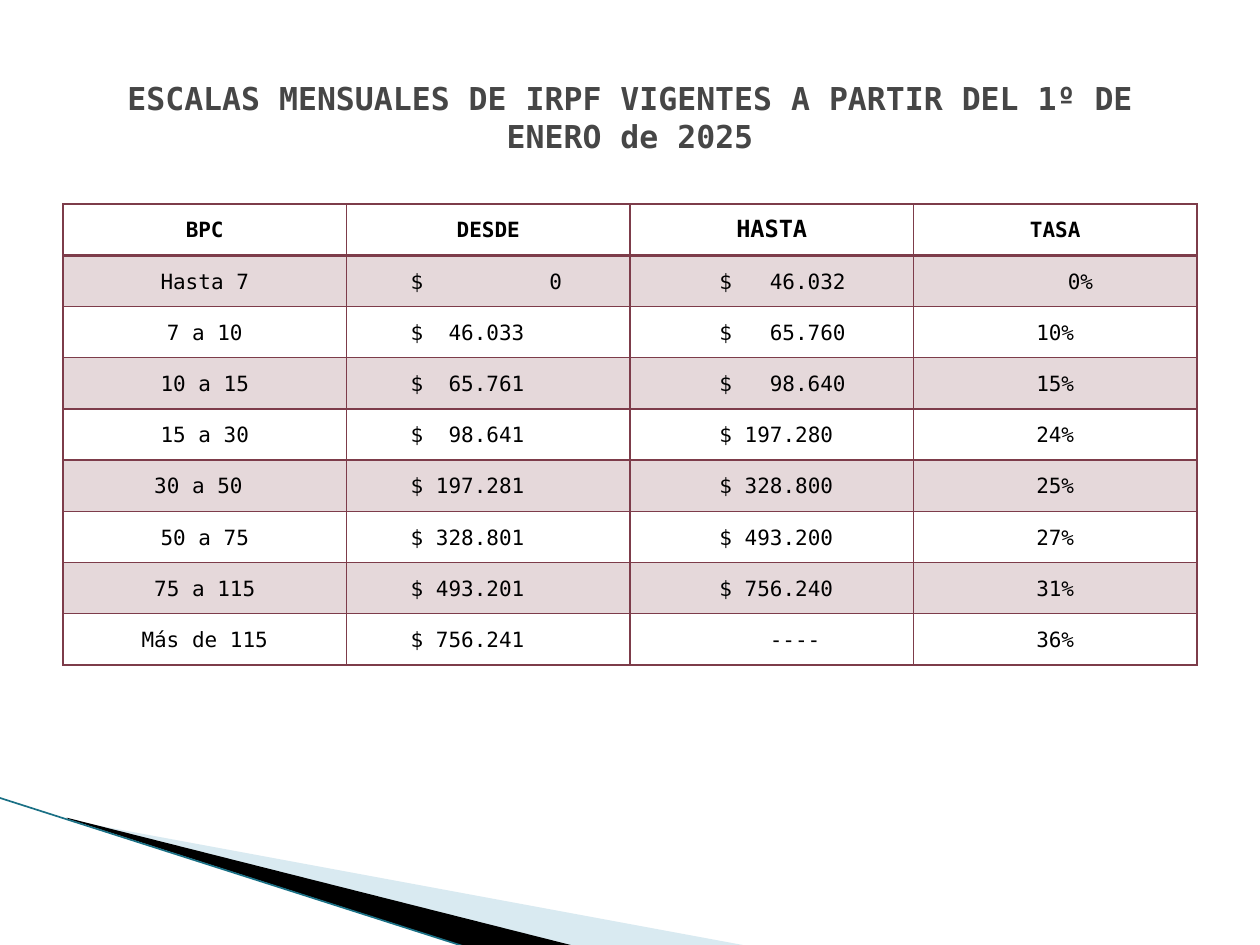
from dataclasses import dataclass

from pptx import Presentation
from pptx.dml.color import RGBColor
from pptx.enum.shapes import MSO_CONNECTOR
from pptx.enum.text import MSO_ANCHOR, PP_ALIGN
from pptx.oxml.ns import qn
from pptx.oxml.xmlchemy import OxmlElement
from pptx.util import Inches, Pt

CENTER = PP_ALIGN.CENTER
LEFT = PP_ALIGN.LEFT
MIDDLE = MSO_ANCHOR.MIDDLE
STRAIGHT = MSO_CONNECTOR.STRAIGHT


@dataclass(frozen=True)
class Theme:
    font: str = "DejaVu Sans Mono"
    title: str = "464646"
    text: str = "000000"
    border: str = "7D3C4A"
    wedge_light: str = "A0CBDC"
    wedge_dark: str = "000000"
    edge: str = "1A7085"
    title_size: float = 18
    cell_size: float = 12
    large_size: float = 13.5
    line_spacing: float = 15
    band_opacity: int = 20
    wedge_opacity: int = 40


THEME = Theme()
TITLE = "ESCALAS MENSUALES DE IRPF VIGENTES A PARTIR DEL 1º DE ENERO de 2025"
HEADERS = ["BPC", "DESDE", "HASTA", "TASA"]
BRACKETS = [
    ("Hasta 7", "\t$\t0", "\t$\t46.032", "0%"),
    ("7 a 10", "\t$\t46.033", "\t$\t65.760", "10%"),
    ("10 a 15", "\t$\t65.761", "\t$\t98.640", "15%"),
    ("15 a 30", "\t$\t98.641", "\t$ 197.280", "24%"),
    ("30 a 50", "\t$ 197.281", "\t$ 328.800", "25%"),
    ("50 a 75", "\t$ 328.801", "\t$ 493.200", "27%"),
    ("75 a 115", "\t$ 493.201", "\t$ 756.240", "31%"),
    ("Más de 115", "\t$ 756.241", "\t----", "36%"),
]
COLUMN_TABS = {1: (0.41, 0.71), 2: (0.61, 1.01)}
CELL_FORMATS = {
    "HASTA": {"size": THEME.large_size, "space_after": 7.5},
    "\t$\t0": {"tabs": (0.41, 1.51)},
    "0%": {"indent_left": 0.4},
    "30 a 50": {"indent_right": 0.1},
    "\t----": {"tabs": (1.01,)},
}


def write_text(frame, text, size=THEME.cell_size, color=THEME.text, bold=False,
               align=CENTER, line_spacing=None, space_after=None, tabs=(),
               indent_left=0, indent_right=0):
    frame.word_wrap = True
    paragraph = frame.paragraphs[0]
    properties = paragraph._p.get_or_add_pPr()
    properties.set("marL", str(Inches(indent_left)))
    properties.set("marR", str(Inches(indent_right)))
    if tabs:
        tab_list = OxmlElement("a:tabLst")
        for position in tabs:
            tab = OxmlElement("a:tab")
            tab.set("pos", str(Inches(position)))
            tab.set("algn", "l")
            tab_list.append(tab)
        properties.append(tab_list)
    paragraph.alignment = align
    if line_spacing:
        paragraph.line_spacing = Pt(line_spacing)
    if space_after:
        paragraph.space_after = Pt(space_after)
    run = paragraph.add_run()
    run.text = text
    run.font.name = THEME.font
    run.font.size = Pt(size)
    run.font.bold = bold
    run.font.color.rgb = RGBColor.from_string(color)


def fill_solid(fill, properties, color, opacity=100):
    fill.solid()
    fill.fore_color.rgb = RGBColor.from_string(color)
    if opacity < 100:
        alpha = OxmlElement("a:alpha")
        alpha.set("val", str(opacity * 1000))
        properties.find(qn("a:solidFill"))[0].append(alpha)


def set_border(cell, side, width):
    line = OxmlElement(f"a:ln{side}")
    line.set("w", str(Pt(width)))
    fill = OxmlElement("a:solidFill")
    color = OxmlElement("a:srgbClr")
    color.set("val", THEME.border)
    fill.append(color)
    line.append(fill)
    cell._tc.get_or_add_tcPr().append(line)


def format_cell(cell, row):
    cell.margin_left = cell.margin_right = cell.margin_top = Inches(0.1)
    cell.margin_bottom = Inches(0.09)
    widths = {"L": 1, "R": 1, "T": 2 if row == 1 else 1, "B": 2 if row == 0 else 1}
    for side, width in widths.items():
        set_border(cell, side, width)
    if row % 2:
        fill_solid(cell.fill, cell._tc.get_or_add_tcPr(), THEME.border, THEME.band_opacity)
    else:
        cell.fill.background()


def add_tax_table(slide):
    rows = [HEADERS, *BRACKETS]
    table = slide.shapes.add_table(len(rows), len(HEADERS), Inches(0.5), Inches(1.62),
                                   Inches(9), Inches(3.66)).table
    table.first_row = False
    table.horz_banding = False
    for row, values in enumerate(rows):
        for column, text in enumerate(values):
            cell = table.cell(row, column)
            format_cell(cell, row)
            options = {"bold": row == 0, "line_spacing": THEME.line_spacing}
            if row and column in COLUMN_TABS:
                options.update(align=LEFT, tabs=COLUMN_TABS[column])
            options.update(CELL_FORMATS.get(text, {}))
            write_text(cell.text_frame, text, **options)


def set_frame(shape, frame):
    left, top, width, height = map(Inches, frame)
    outline = next(shape._element.iter(qn("a:path")))
    outline.set("w", str(width))
    outline.set("h", str(height))
    for point in outline.iter(qn("a:pt")):
        point.set("x", str(int(point.get("x")) + shape.left - left))
        point.set("y", str(int(point.get("y")) + shape.top - top))
    shape.left, shape.top, shape.width, shape.height = left, top, width, height


def add_wedge(slide, frame, points, color, opacity=100):
    corners = [(Inches(x), Inches(y)) for x, y in points]
    builder = slide.shapes.build_freeform(*corners[0])
    builder.add_line_segments(corners[1:], close=True)
    shape = builder.convert_to_shape()
    set_frame(shape, frame)
    shape.shadow.inherit = False
    shape.line.fill.background()
    fill_solid(shape.fill, shape._element.spPr, color, opacity)


def add_edge(slide, start, end):
    connector = slide.shapes.add_connector(STRAIGHT, *map(Inches, start + end))
    connector.line.color.rgb = RGBColor.from_string(THEME.edge)
    connector.line.width = Pt(0.95)
    connector._element.spPr.append(OxmlElement("a:effectLst"))


def add_title(slide):
    box = slide.shapes.add_textbox(Inches(0.5), Inches(0.3), Inches(9), Inches(1.25))
    box.text_frame.vertical_anchor = MIDDLE
    write_text(box.text_frame, TITLE, size=THEME.title_size, color=THEME.title, bold=True)


def main():
    presentation = Presentation()
    presentation.slide_width = Inches(10)
    presentation.slide_height = Inches(7.5)
    slide = presentation.slides.add_slide(presentation.slide_layouts[6])
    add_wedge(slide, (0.78, 5.47, 4.16, 1.58),
              [(0.55, 6.51), (5.95, 7.51), (4.56, 7.51), (0.55, 6.5)],
              THEME.wedge_light, THEME.wedge_opacity)
    add_wedge(slide, (-0.06, 6.33, 4.16, 0.92),
              [(0.53, 6.49), (4.57, 7.51), (3.72, 7.52), (0.54, 6.5)], THEME.wedge_dark)
    add_edge(slide, (-0.01, 6.33), (3.71, 7.52))
    add_tax_table(slide)
    add_title(slide)
    presentation.save("out.pptx")


if __name__ == "__main__":
    main()
